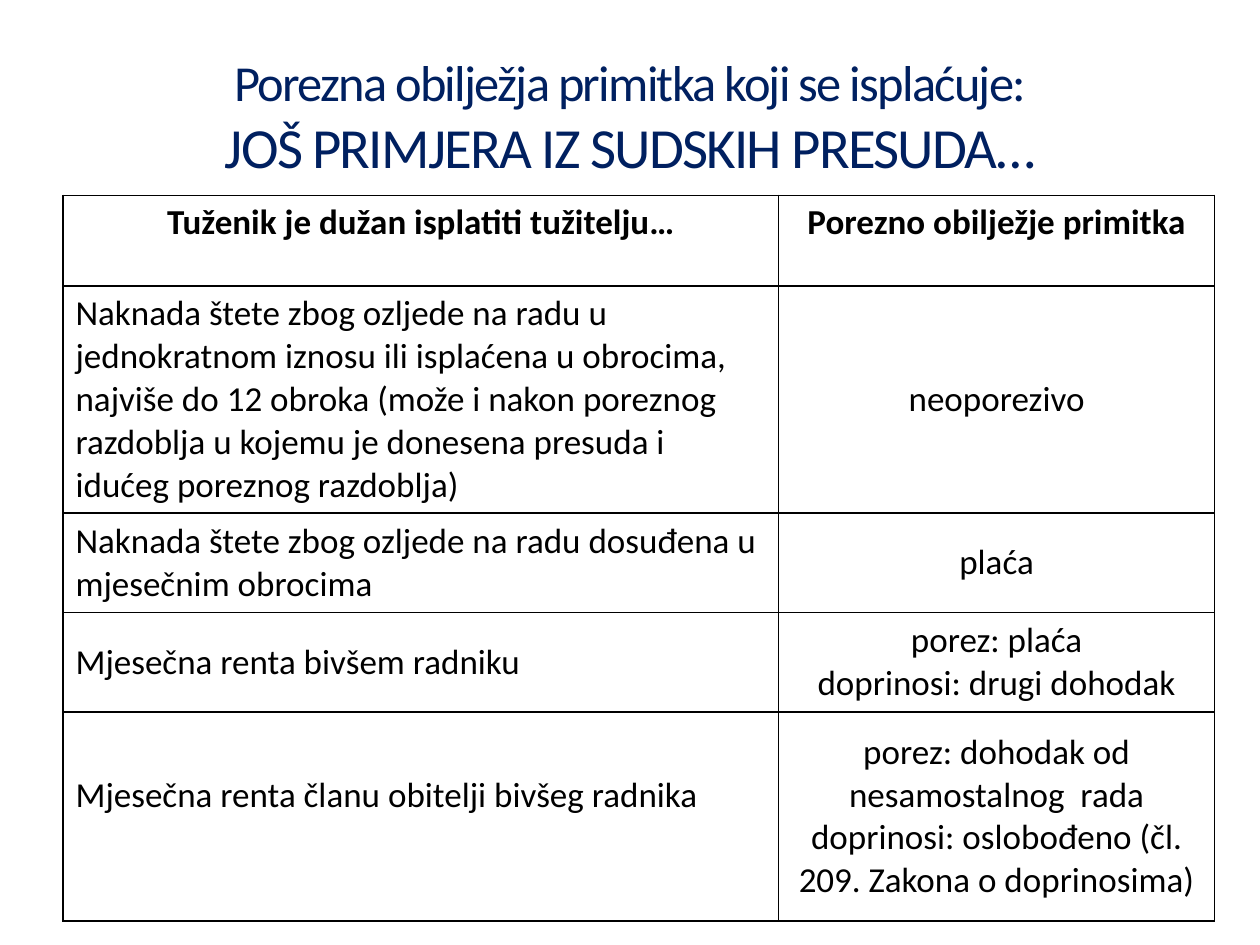
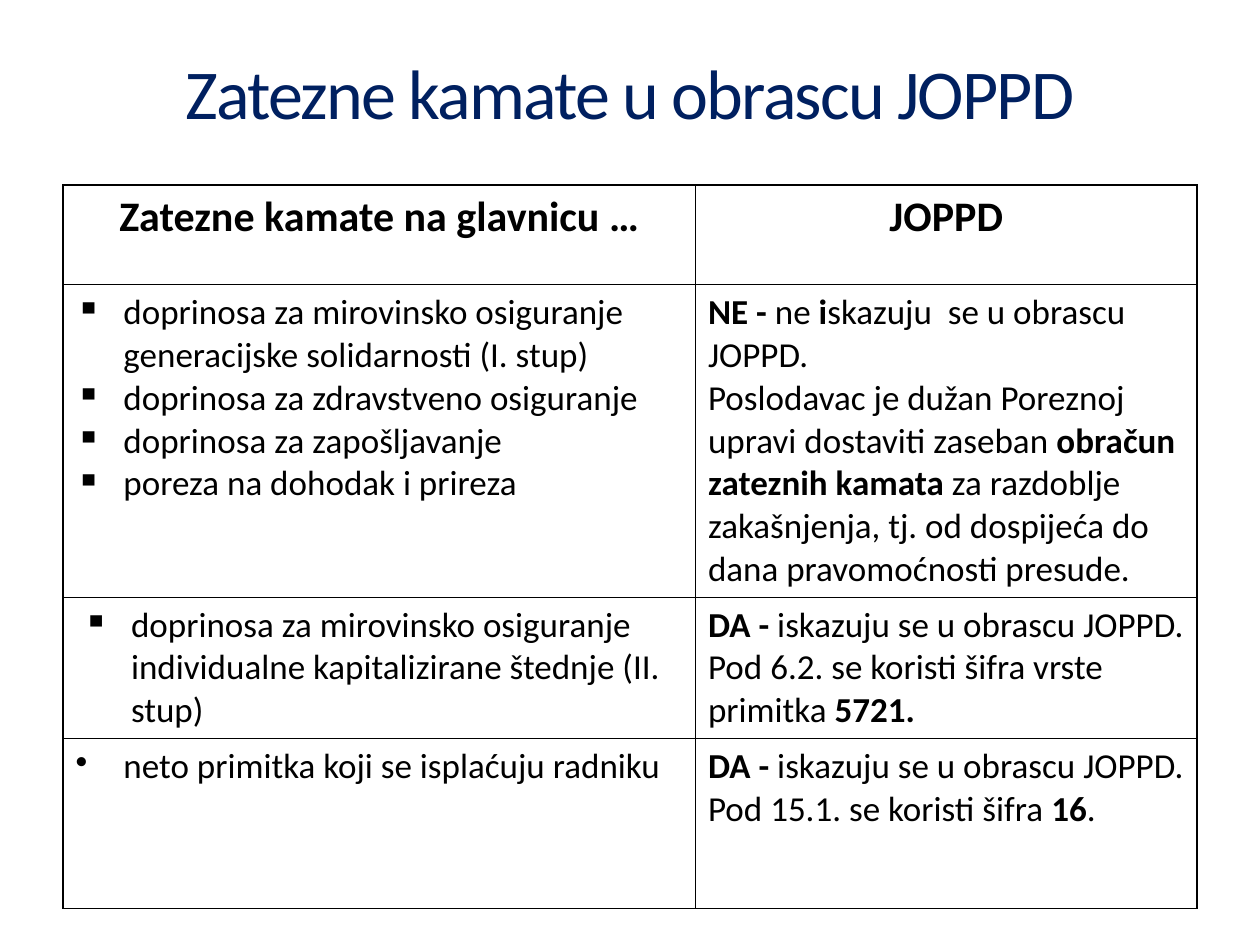
from dataclasses import dataclass, field
from typing import Any

from lxml.etree import SubElement
from pptx import Presentation
from pptx.dml.color import RGBColor
from pptx.enum.text import MSO_ANCHOR, MSO_AUTO_SIZE, PP_ALIGN
from pptx.oxml import parse_xml
from pptx.oxml.ns import nsdecls, qn
from pptx.util import Inches, Pt


@dataclass(frozen=True)
class Theme:
    font: str = "Calibri"
    navy: RGBColor = RGBColor(0x00, 0x20, 0x60)
    ink: RGBColor = RGBColor(0x00, 0x00, 0x00)
    paper: RGBColor = RGBColor(0xFF, 0xFF, 0xFF)
    title_size: float = 40
    lead_size: float = 28.8
    subtitle_size: float = 32.4
    header_size: float = 24
    body_size: float = 20
    title_tracking: int = -100
    border_width: float = 1


THEME = Theme()
TOP, MIDDLE = MSO_ANCHOR.TOP, MSO_ANCHOR.MIDDLE
LEFT, CENTER = PP_ALIGN.LEFT, PP_ALIGN.CENTER


@dataclass(frozen=True)
class Line:
    text: str
    size: float


@dataclass(frozen=True)
class Cell:
    paragraphs: list[str]
    align: PP_ALIGN = LEFT
    anchor: MSO_ANCHOR = TOP
    size: float = THEME.body_size
    bullet: str = ""
    indent: float = 0.38
    bottom: float = 0.05


@dataclass(frozen=True)
class TablePage:
    title: list[Line]
    title_top: float
    title_height: float
    table_top: float
    columns: list[float]
    heights: list[float]
    rows: list[list[Cell]] = field(default_factory=list)


def header(text: str, size: float) -> Cell:
    return Cell([f"**{text}**"], CENTER, size=size)


def label(text: str, bottom: float = 0.05) -> Cell:
    return Cell([text], anchor=MIDDLE, bottom=bottom)


def verdict(*paragraphs: str) -> Cell:
    return Cell(list(paragraphs), CENTER, MIDDLE)


def bullets(*paragraphs: str, mark: str = "▪", indent: float = 0.38) -> Cell:
    return Cell(list(paragraphs), bullet=mark, indent=indent)


PAGES = [
    TablePage(
        title=[
            Line("Porezna obilježja primitka koji se isplaćuje:", THEME.lead_size),
            Line("JOŠ PRIMJERA IZ SUDSKIH PRESUDA…", THEME.subtitle_size),
        ],
        title_top=0.21,
        title_height=1.34,
        table_top=1.55,
        columns=[5.68, 3.46],
        heights=[0.72, 1.8, 0.79, 0.79, 1.66],
        rows=[
            [
                header("Tuženik je dužan isplatiti tužitelju…", THEME.body_size),
                header("Porezno obilježje primitka", THEME.body_size),
            ],
            [
                label(
                    "Naknada štete zbog ozljede na radu u jednokratnom iznosu ili "
                    "isplaćena u obrocima, najviše do 12 obroka (može i nakon poreznog "
                    "razdoblja u kojemu je donesena presuda i idućeg poreznog razdoblja)"
                ),
                verdict("neoporezivo"),
            ],
            [
                label("Naknada štete zbog ozljede na radu dosuđena u mjesečnim obrocima"),
                verdict("plaća"),
            ],
            [
                label("Mjesečna renta bivšem radniku"),
                verdict("porez: plaća", "doprinosi: drugi dohodak"),
            ],
            [
                label("Mjesečna renta članu obitelji bivšeg radnika", bottom=0.39),
                verdict(
                    "porez: dohodak od nesamostalnog  rada",
                    "doprinosi: oslobođeno (čl. 209. Zakona o doprinosima)",
                ),
            ],
        ],
    ),
    TablePage(
        title=[Line("Zatezne kamate u obrascu JOPPD", THEME.title_size)],
        title_top=0.23,
        title_height=0.92,
        table_top=1.47,
        columns=[5.02, 3.98],
        heights=[0.79, 2.48, 1.12, 1.35],
        rows=[
            [
                header("Zatezne kamate na glavnicu …", THEME.header_size),
                header("JOPPD", THEME.header_size),
            ],
            [
                bullets(
                    "doprinosa za mirovinsko osiguranje generacijske solidarnosti (I. stup)",
                    "doprinosa za zdravstveno osiguranje",
                    "doprinosa za zapošljavanje",
                    "poreza na dohodak i prireza",
                ),
                Cell([
                    "**NE - **ne **i**skazuju  se u obrascu JOPPD.",
                    "Poslodavac je dužan Poreznoj upravi dostaviti zaseban "
                    "**obračun zateznih kamata **za razdoblje zakašnjenja, "
                    "tj. od dospijeća do dana pravomoćnosti presude.",
                ]),
            ],
            [
                bullets(
                    "doprinosa za mirovinsko osiguranje individualne "
                    "kapitalizirane štednje (II. stup)",
                    indent=0.44,
                ),
                Cell([
                    "**DA - **iskazuju se u obrascu JOPPD.",
                    "Pod 6.2. se koristi šifra vrste primitka **5721.**",
                ]),
            ],
            [
                bullets("neto primitka koji se isplaćuju radniku", mark="•"),
                Cell([
                    "**DA - **iskazuju se u obrascu JOPPD.",
                    "Pod 15.1. se koristi šifra **16**.",
                ]),
            ],
        ],
    ),
]


def apply(target: Any, values: dict[str, Any]) -> None:
    for name, value in values.items():
        setattr(target, name, value)


def add_span(para: Any, text: str, size: float, color: RGBColor, bold: bool = False) -> Any:
    span = para.add_run()
    span.text = text
    apply(span.font, {"name": THEME.font, "size": Pt(size), "bold": bold})
    span.font.color.rgb = color
    return span


def add_bullet(para: Any, mark: str, indent: float) -> None:
    properties = para._p.get_or_add_pPr()
    properties.set("marL", str(Inches(indent)))
    properties.set("indent", str(Inches(-0.38)))
    SubElement(properties, qn("a:buChar")).set("char", mark)


def add_borders(cell: Any) -> None:
    properties = cell._tc.get_or_add_tcPr()
    for position, side in enumerate(("lnL", "lnR", "lnT", "lnB")):
        border = parse_xml(
            f'<a:{side} {nsdecls("a")} w="{Pt(THEME.border_width)}"><a:solidFill>'
            f'<a:srgbClr val="{THEME.ink}"/></a:solidFill></a:{side}>'
        )
        properties.insert(position, border)


def fill_cell(cell: Any, content: Cell) -> None:
    apply(cell, {"vertical_anchor": content.anchor, "margin_bottom": Inches(content.bottom)})
    cell.fill.solid()
    cell.fill.fore_color.rgb = THEME.paper
    add_borders(cell)
    frame = cell.text_frame
    for index, text in enumerate(content.paragraphs):
        para = frame.add_paragraph() if index else frame.paragraphs[0]
        para.alignment = content.align
        if content.bullet:
            add_bullet(para, content.bullet, content.indent)
        for part, words in enumerate(text.split("**")):
            if words:
                add_span(para, words, content.size, THEME.ink, bold=part % 2 == 1)


def draw_title(slide: Any, page: TablePage) -> None:
    box = slide.shapes.title
    apply(box, {
        "left": Inches(0.5),
        "top": Inches(page.title_top),
        "width": Inches(9),
        "height": Inches(page.title_height),
    })
    apply(box.text_frame, {
        "word_wrap": True,
        "auto_size": MSO_AUTO_SIZE.NONE,
        "vertical_anchor": MIDDLE,
        "margin_top": Inches(0.12),
    })
    para = box.text_frame.paragraphs[0]
    para.alignment = CENTER
    for index, line in enumerate(page.title):
        if index:
            para.add_line_break()
        span = add_span(para, line.text, line.size, THEME.navy)
        span._r.get_or_add_rPr().set("spc", str(THEME.title_tracking))


def draw_table(slide: Any, page: TablePage) -> None:
    table = slide.shapes.add_table(
        len(page.heights), len(page.columns),
        Inches(0.5), Inches(page.table_top),
        Inches(sum(page.columns)), Inches(sum(page.heights)),
    ).table
    apply(table, {"first_row": False, "horz_banding": False})
    for column, width in zip(table.columns, page.columns):
        column.width = Inches(width)
    for row, height, contents in zip(table.rows, page.heights, page.rows):
        row.height = Inches(height)
        for cell, content in zip(row.cells, contents):
            fill_cell(cell, content)


def main() -> None:
    deck = Presentation()
    apply(deck, {"slide_width": Inches(10), "slide_height": Inches(7.5)})
    for page in PAGES:
        slide = deck.slides.add_slide(deck.slide_layouts.get_by_name("Title Only"))
        draw_title(slide, page)
        draw_table(slide, page)
    deck.save("out.pptx")


if __name__ == "__main__":
    main()
